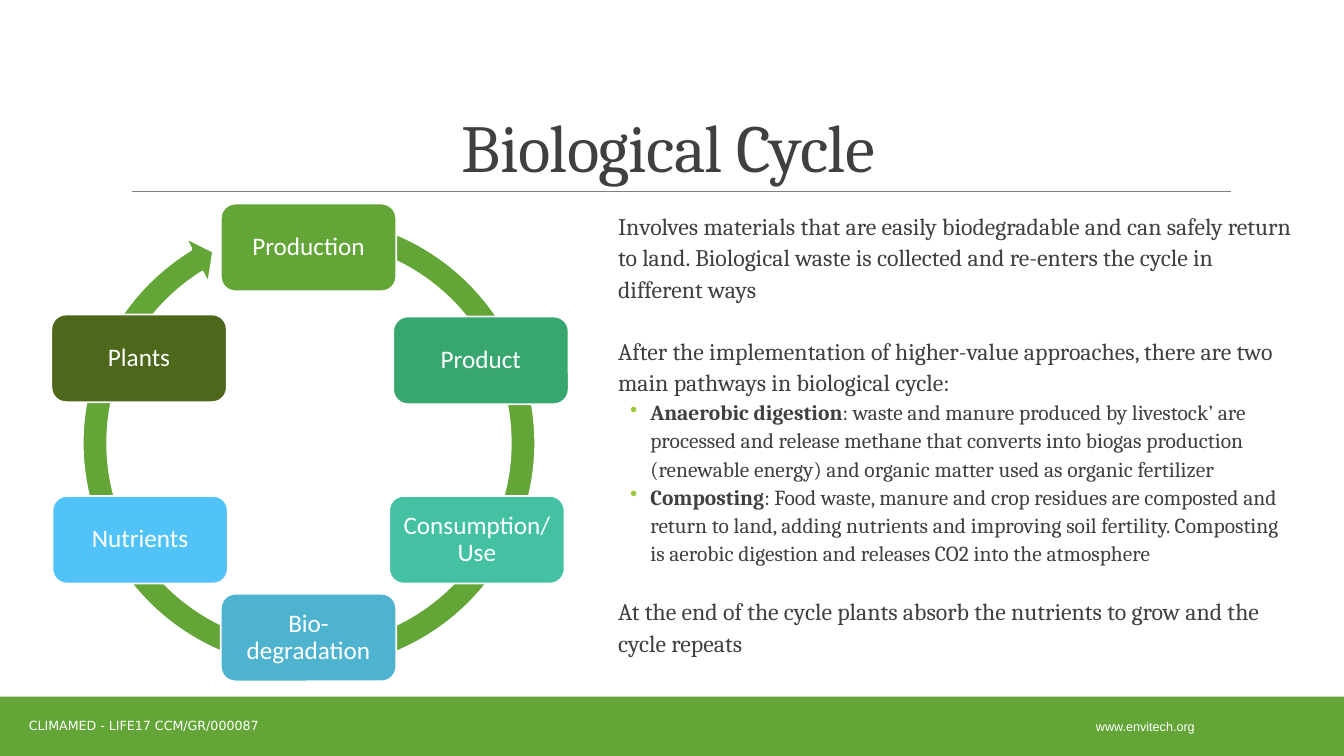
"""Build the Biological Cycle slide: a six-step loop beside an explanation."""
from lxml.etree import SubElement
from pptx import Presentation
from pptx.dml.color import RGBColor
from pptx.enum.shapes import MSO_CONNECTOR, MSO_SHAPE
from pptx.enum.text import MSO_ANCHOR, MSO_AUTO_SIZE, PP_ALIGN
from pptx.oxml.ns import qn
from pptx.util import Inches, Pt

GREEN = RGBColor(0x63, 0xA5, 0x37)
LIME = RGBColor(0x99, 0xCB, 0x38)
JADE = RGBColor(0x37, 0xA7, 0x6F)
TURQUOISE = RGBColor(0x44, 0xC1, 0xA3)
TEAL = RGBColor(0x4E, 0xB3, 0xCF)
SKY = RGBColor(0x51, 0xC3, 0xF9)
OLIVE = RGBColor(0x4D, 0x67, 0x1B)
GRAY = RGBColor(0x80, 0x80, 0x80)
DARK = RGBColor(0x40, 0x40, 0x40)
WHITE = RGBColor(0xFF, 0xFF, 0xFF)


def add_filled(kind, left, top, width, height, color, outline=0):
    shape = page.shapes.add_shape(kind, Inches(left), Inches(top), Inches(width), Inches(height))
    shape.shadow.inherit = False
    shape.fill.solid()
    shape.fill.fore_color.rgb = color
    if outline:
        shape.line.color.rgb = WHITE
        shape.line.width = Pt(outline)
    else:
        shape.line.fill.background()
    return shape


def style(paragraph, name, size, color):
    paragraph.font.name = name
    paragraph.font.size = Pt(size)
    paragraph.font.color.rgb = color


deck = Presentation()
deck.slide_width, deck.slide_height = Inches(13.33), Inches(7.5)
page = deck.slides.add_slide(deck.slide_layouts[5])

rule = page.shapes.add_connector(
    MSO_CONNECTOR.STRAIGHT, Inches(1.31), Inches(1.9), Inches(12.21), Inches(1.9))
rule.line.color.rgb = GRAY
rule.line.width = Pt(0.5)
SubElement(rule.element.spPr, qn("a:effectLst"))

add_filled(MSO_SHAPE.RECTANGLE, 0, 6.91, 13.33, 0.59, GREEN)
footers = [
    ("www.envitech.org", 10.13, 7.01, 2.46, "Arial"),
    ("CLIMAMED - LIFE17 CCM/GR/000087", -0.16, 7, 3.17, "DejaVu Sans"),
]
for text, left, top, width, font in footers:
    box = page.shapes.add_textbox(Inches(left), Inches(top), Inches(width), Inches(0.4))
    frame = box.text_frame
    frame.word_wrap = True
    frame.vertical_anchor = MSO_ANCHOR.MIDDLE
    para = frame.paragraphs[0]
    para.text = text
    para.alignment = PP_ALIGN.CENTER
    style(para, font, 9, WHITE)

title = page.shapes.title
title.left, title.top, title.width, title.height = (
    Inches(1.2), Inches(0.31), Inches(11), Inches(1.59))
title.text_frame.auto_size = MSO_AUTO_SIZE.NONE
title.text_frame.vertical_anchor = MSO_ANCHOR.BOTTOM
para = title.text_frame.paragraphs[0]
para.text = "Biological Cycle "
para.alignment = PP_ALIGN.CENTER
para.line_spacing = 0.85
style(para, "Cambria", 48, DARK)
para.runs[0].font._element.set("spc", "-50")

body = page.shapes.add_textbox(Inches(6.03), Inches(2.02), Inches(6.78), Inches(4.91))
frame = body.text_frame
frame.word_wrap = True
frame.margin_left = frame.margin_right = 0
passages = [
    ("", "Involves materials that are easily biodegradable and can safely return to land. "
     "Biological waste is collected and re-enters the cycle in different ways", 0),
    ("", "After the implementation of higher-value approaches, there are two main pathways "
     "in biological cycle:", 22),
    ("Anaerobic digestion", ": waste and manure produced by livestock’ are processed and "
     "release methane that converts into biogas production (renewable energy) and organic "
     "matter used as organic fertilizer", 0),
    ("Composting", ": Food waste, manure and crop residues are composted and return to land, "
     "adding nutrients and improving soil fertility. Composting is aerobic digestion and "
     "releases CO2 into the atmosphere", 0),
    ("", "At the end of the cycle plants absorb the nutrients to grow and the cycle repeats", 20),
]
for index, (term, text, gap) in enumerate(passages):
    para = frame.add_paragraph() if index else frame.paragraphs[0]
    para.line_spacing = 1.1
    para.space_before = Pt(gap)
    properties = para._p.get_or_add_pPr()
    properties.set("marL", str(Inches(0.42 if term else 0.1)))
    if term:
        properties.set("indent", str(Inches(-0.2)))
        bullet_color = SubElement(properties, qn("a:buClr"))
        SubElement(bullet_color, qn("a:srgbClr"), val=str(LIME))
        SubElement(properties, qn("a:buChar"), char="•")
        span = para.add_run()
        span.text = term
        span.font.bold = True
    para.add_run().text = text
    style(para, "Cambria", 15.3 if term else 17, DARK)

loop = add_filled(MSO_SHAPE.CIRCULAR_ARROW, 0.68, 2.01, 4.77, 4.77, GREEN, 2)
for index, value in enumerate([0.053, 3.126, 143.01, 170.845, 0.055]):
    loop.adjustments[index] = value

stages = [
    ("Production", 2.19, 2.02, GREEN),
    ("Product", 3.9, 3.14, JADE),
    ("Consumption/ Use", 3.86, 4.92, TURQUOISE),
    ("Bio-degradation", 2.19, 5.89, TEAL),
    ("Nutrients", 0.52, 4.92, SKY),
    ("Plants", 0.51, 3.12, OLIVE),
]
for label, left, top, color in stages:
    stage = add_filled(MSO_SHAPE.ROUNDED_RECTANGLE, left, top, 1.74, 0.87, color, 1.25)
    frame = stage.text_frame
    frame.word_wrap = True
    frame.vertical_anchor = MSO_ANCHOR.MIDDLE
    frame.margin_left = frame.margin_right = Inches(0.07)
    frame.margin_top = frame.margin_bottom = Inches(0.07)
    para = frame.paragraphs[0]
    para.text = label
    para.alignment = PP_ALIGN.CENTER
    para.line_spacing = 0.9
    style(para, "Calibri", 18, WHITE)

deck.save("out.pptx")
